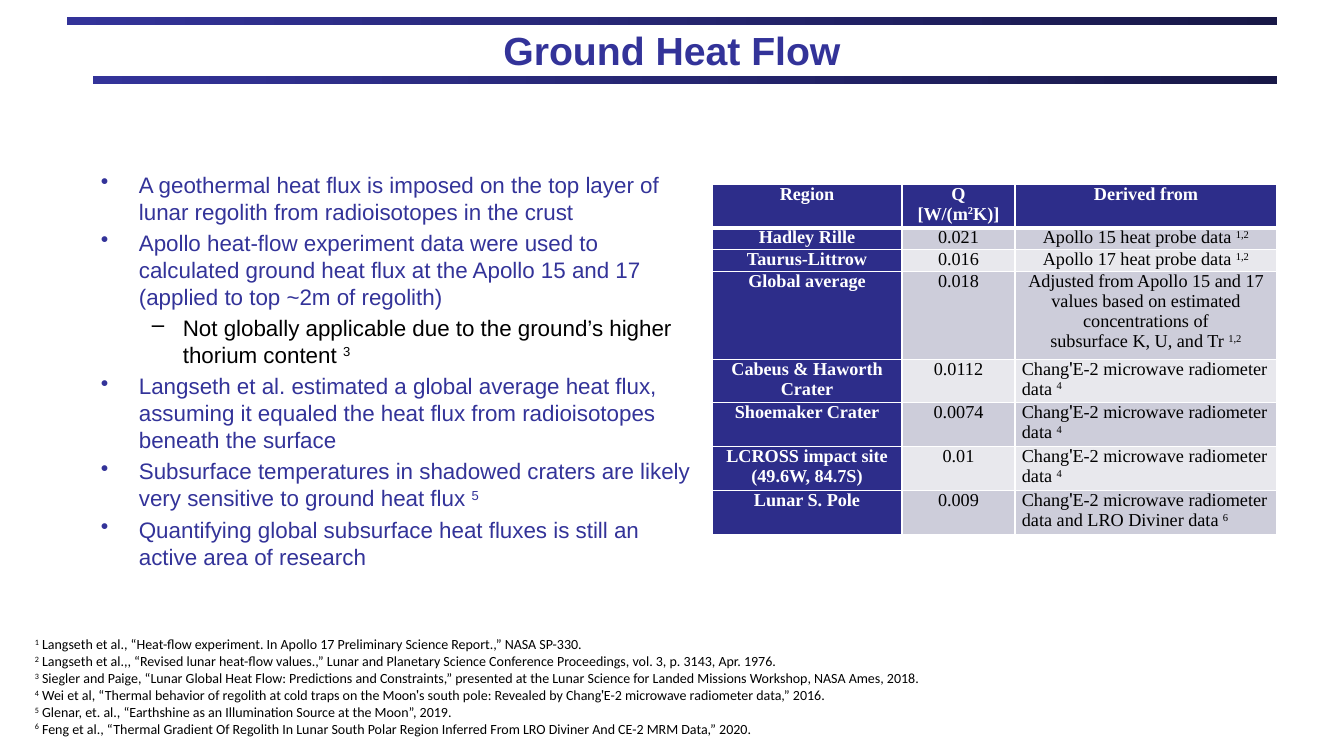
from lxml import etree
from pptx import Presentation
from pptx.dml.color import RGBColor
from pptx.enum.shapes import MSO_SHAPE as Shape
from pptx.enum.text import MSO_ANCHOR as Anchor, PP_ALIGN as Align
from pptx.oxml import parse_xml
from pptx.oxml.ns import nsdecls, qn
from pptx.util import Pt

PX = 12192000 / 1344
BLUE, NAVY, CELL_BLUE = "333399", "181847", "2D2D8A"
BLACK, WHITE = "000000", "FFFFFF"
BANDS = ["CDCDDA", "E8E8ED"]


def px(*lengths):
    return [round(length * PX) for length in lengths]


def add_runs(paragraph, texts, size, font, color, bold=False):
    """Add the texts as runs, every second one as superscript."""
    for index, text in enumerate(texts):
        for number, line in enumerate(text.split("\n")):
            if number:
                paragraph.add_line_break()
                line_break = paragraph._p.findall(qn("a:br"))[-1]
                etree.SubElement(line_break, qn("a:rPr")).set("sz", str(size * 100))
            if not line:
                continue
            run = paragraph.add_run()
            run.text = line
            run.font.size, run.font.name, run.font.bold = Pt(size), font, bold
            run.font.color.rgb = RGBColor.from_string(color)
            if index % 2:
                run.font._element.set("baseline", "30000")


presentation = Presentation()
presentation.slide_width, presentation.slide_height = px(1344, 756)
slide = presentation.slides.add_slide(presentation.slide_layouts[5])

# Gradient bars above and below the title
for left, top, width in [(93, 76, 1184), (67, 17, 1210)]:
    bar = slide.shapes.add_shape(Shape.RECTANGLE, *px(left, top, width, 8))
    bar.shadow.inherit = False
    bar.line.fill.background()
    bar.fill.gradient()
    bar.fill.gradient_angle = 0
    for stop, color in zip(bar.fill.gradient_stops, [BLUE, NAVY]):
        stop.color.rgb = RGBColor.from_string(color)

# Title
title = slide.shapes.title
title.left, title.top, title.width, title.height = px(67, 21, 1210, 58)
frame = title.text_frame
frame.vertical_anchor = Anchor.MIDDLE
frame.margin_top = frame.margin_bottom = 0
frame.paragraphs[0].alignment = Align.CENTER
add_runs(frame.paragraphs[0], ["Ground Heat Flow"], 28, "Arial", BLUE, True)

# Bullets: level, then text and superscript
bullets = [
    (0, "A geothermal heat flux is imposed on the top layer of lunar regolith from "
        "radioisotopes in the crust", ""),
    (0, "Apollo heat-flow experiment data were used to calculated ground heat flux at "
        "the Apollo 15 and 17 (applied to top ~2m of regolith)", ""),
    (1, "Not globally applicable due to the ground’s higher thorium content ", "3"),
    (0, "Langseth et al. estimated a global average heat flux, assuming it equaled the "
        "heat flux from radioisotopes beneath the surface", ""),
    (0, "Subsurface temperatures in shadowed craters are likely very sensitive to ground "
        "heat flux ", "5"),
    (0, "Quantifying global subsurface heat fluxes is still an active area of research", ""),
]
levels = [("•", 38, -38, BLUE), ("–", 82, -31, BLACK)]
frame = slide.shapes.add_textbox(*px(91, 166, 611, 480)).text_frame
frame.word_wrap = True
for index, (level, *texts) in enumerate(bullets):
    mark, margin, indent, color = levels[level]
    paragraph = frame.add_paragraph() if index else frame.paragraphs[0]
    paragraph.level = level
    properties = paragraph._p.get_or_add_pPr()
    for name, value in zip(["marL", "indent"], px(margin, indent)):
        properties.set(name, str(value))
    etree.SubElement(properties, qn("a:buChar")).set("char", mark)
    paragraph.space_before = Pt(3.2 if index else 0)
    add_runs(paragraph, texts, 16, "Arial", color)

# Heat flux table: each cell lists its text and superscripts in turn
radiometer = "Chang׳E-2 microwave radiometer data "
rows = [
    (["Region"], ["Q [W/(m", "2", "K)]"], ["Derived from"]),
    (["Hadley Rille"], ["0.021"], ["Apollo 15 heat probe data ", "1,2"]),
    (["Taurus-Littrow"], ["0.016"], ["Apollo 17 heat probe data ", "1,2"]),
    (["Global average"], ["0.018"],
     ["Adjusted from Apollo 15 and 17 values based on estimated concentrations of\n"
      "subsurface K, U, and Tr ", "1,2"]),
    (["Cabeus & Haworth Crater"], ["0.0112"], [radiometer, "4"]),
    (["Shoemaker Crater"], ["0.0074"], [radiometer, "4"]),
    (["LCROSS impact site (49.6W, 84.7S)"], ["0.01"], [radiometer, "4"]),
    (["Lunar S. Pole"], ["0.009"], [radiometer + "and LRO Diviner data ", "6"]),
]
heights = [40, 20, 20, 80, 40, 40, 40, 40]
table = slide.shapes.add_table(8, 3, *px(712, 184, 565, sum(heights))).table
for column, width in zip(table.columns, px(190, 113, 262)):
    column.width = width
for r, (cells, height) in enumerate(zip(rows, px(*heights))):
    table.rows[r].height = height
    for c, texts in enumerate(cells):
        cell = table.cell(r, c)
        heading = r == 0 or c == 0
        cell.margin_left, cell.margin_right, cell.margin_top, cell.margin_bottom = px(7, 7, 0, 0)
        cell.fill.solid()
        cell.fill.fore_color.rgb = RGBColor.from_string(
            CELL_BLUE if heading else BANDS[(r - 1) % 2])
        for position, side in enumerate("LRTB"):
            thick = (r, side) in [(0, "B"), (1, "T")]
            cell._tc.get_or_add_tcPr().insert(position, parse_xml(
                f'<a:ln{side} {nsdecls("a")} w="{Pt(3 if thick else 1)}"><a:solidFill>'
                f'<a:srgbClr val="{WHITE}"/></a:solidFill></a:ln{side}>'))
        paragraph = cell.text_frame.paragraphs[0]
        paragraph.alignment = Align.LEFT if texts[0].startswith(radiometer) else Align.CENTER
        add_runs(paragraph, texts, 13, "Times New Roman", WHITE if heading else BLACK, heading)

# Numbered references
references = [
    "Langseth et al., “Heat-flow experiment. In Apollo 17 Preliminary Science Report.,” "
    "NASA SP-330.",
    "Langseth et al.,, “Revised lunar heat-flow values.,” Lunar and Planetary Science "
    "Conference Proceedings, vol. 3, p. 3143, Apr. 1976.",
    "Siegler and Paige, “Lunar Global Heat Flow: Predictions and Constraints,” presented at "
    "the Lunar Science for Landed Missions Workshop, NASA Ames, 2018.",
    "Wei et al, “Thermal behavior of regolith at cold traps on the Moon׳s south pole: "
    "Revealed by Chang׳E-2 microwave radiometer data,” 2016.",
    "Glenar, et. al., “Earthshine as an Illumination Source at the Moon”, 2019.",
    "Feng et al., “Thermal Gradient Of Regolith In Lunar South Polar Region Inferred From "
    "LRO Diviner And CE-2 MRM Data,” 2020.",
]
frame = slide.shapes.add_textbox(*px(25, 631, 1210, 112)).text_frame
frame.word_wrap = True
for index, reference in enumerate(references):
    paragraph = frame.add_paragraph() if index else frame.paragraphs[0]
    paragraph.alignment = Align.JUSTIFY
    add_runs(paragraph, ["", str(index + 1), " " + reference], 10, "Calibri", BLACK)

presentation.save("out.pptx")
